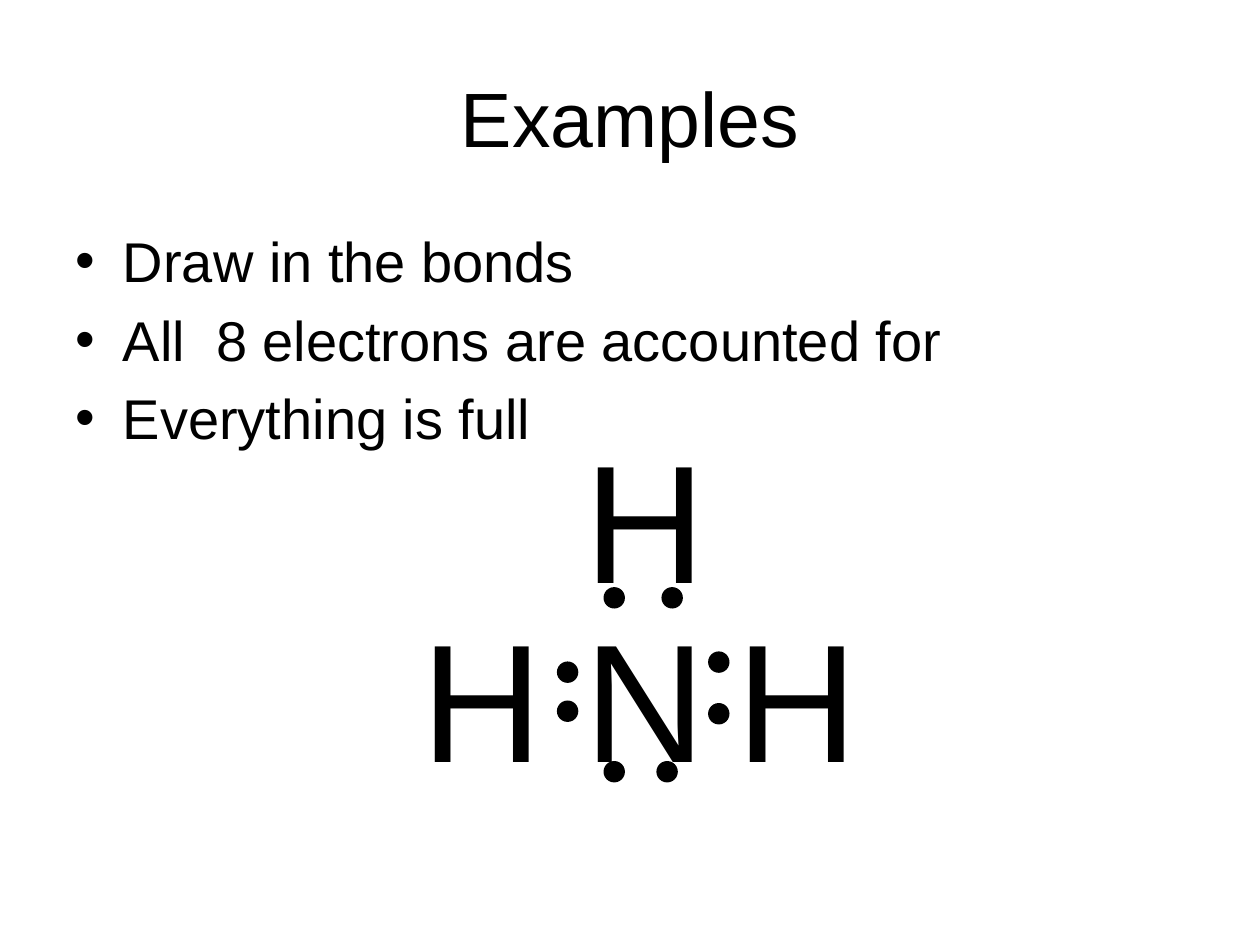
from dataclasses import dataclass
from pptx import Presentation
from pptx.dml.color import RGBColor
from pptx.enum.shapes import MSO_SHAPE
from pptx.enum.text import MSO_ANCHOR, PP_ALIGN
from pptx.util import Inches, Pt


@dataclass(frozen=True)
class Theme:
    font: str = "Arial"
    ink: RGBColor = RGBColor(0, 0, 0)
    title: int = 44
    body: int = 32
    atom: int = 96


@dataclass(frozen=True)
class Atom:
    symbol: str
    left: float
    top: float


@dataclass(frozen=True)
class Pair:
    """Two electrons: the first dot's corner and the step to the second."""
    left: float
    top: float
    across: float = 0
    down: float = 0


THEME = Theme()
DOT = 0.17
MID, ROW = 4.54, 4.67
POINTS = ["Draw in the bonds", "All  8 electrons are accounted for", "Everything is full"]
ATOMS = [
    Atom("N", MID, ROW),
    Atom("H", 5.75, ROW),
    Atom("H", 3.25, ROW),
    Atom("H", MID, 3.25),
]
PAIRS = [
    Pair(4.79, 4.66, across=0.46),
    Pair(4.79, 6.04, across=0.42),
    Pair(4.42, 5.25, down=0.31),
    Pair(5.62, 5.17, down=0.41),
]


def place(shape, left: float, top: float, width: float, height: float) -> None:
    shape.left, shape.top = Inches(left), Inches(top)
    shape.width, shape.height = Inches(width), Inches(height)


def write(frame, *lines: str, size: int, align=None, anchor=MSO_ANCHOR.TOP, before=None) -> None:
    frame.word_wrap = True
    frame.vertical_anchor = anchor
    for i, line in enumerate(lines):
        para = frame.add_paragraph() if i else frame.paragraphs[0]
        if align is not None:
            para.alignment = align
        if before is not None:
            para.space_before = Pt(before)
        run = para.add_run()
        run.text = line
        run.font.name = THEME.font
        run.font.size = Pt(size)
        run.font.color.rgb = THEME.ink


def draw_atom(slide, atom: Atom) -> None:
    box = slide.shapes.add_textbox(
        Inches(atom.left), Inches(atom.top), Inches(0.92), Inches(1.7))
    write(box.text_frame, atom.symbol, size=THEME.atom, before=9)


def draw_pair(slide, pair: Pair) -> None:
    for step in range(2):
        dot = slide.shapes.add_shape(
            MSO_SHAPE.OVAL,
            Inches(pair.left + step * pair.across),
            Inches(pair.top + step * pair.down),
            Inches(DOT), Inches(DOT))
        dot.shadow.inherit = False
        dot.fill.solid()
        dot.fill.fore_color.rgb = THEME.ink
        dot.line.fill.background()


def main() -> None:
    deck = Presentation()
    deck.slide_width, deck.slide_height = Inches(10), Inches(7.5)
    slide = deck.slides.add_slide(deck.slide_layouts[1])

    title, body = slide.shapes.title, slide.placeholders[1]
    place(title, 0.5, 0.3, 9, 1.25)
    write(title.text_frame, "Examples", size=THEME.title,
          align=PP_ALIGN.CENTER, anchor=MSO_ANCHOR.MIDDLE)
    place(body, 0.5, 1.75, 9, 4.95)
    write(body.text_frame, *POINTS, size=THEME.body)

    for atom in ATOMS:
        draw_atom(slide, atom)
    for pair in PAIRS:
        draw_pair(slide, pair)
    deck.save("out.pptx")


if __name__ == "__main__":
    main()
